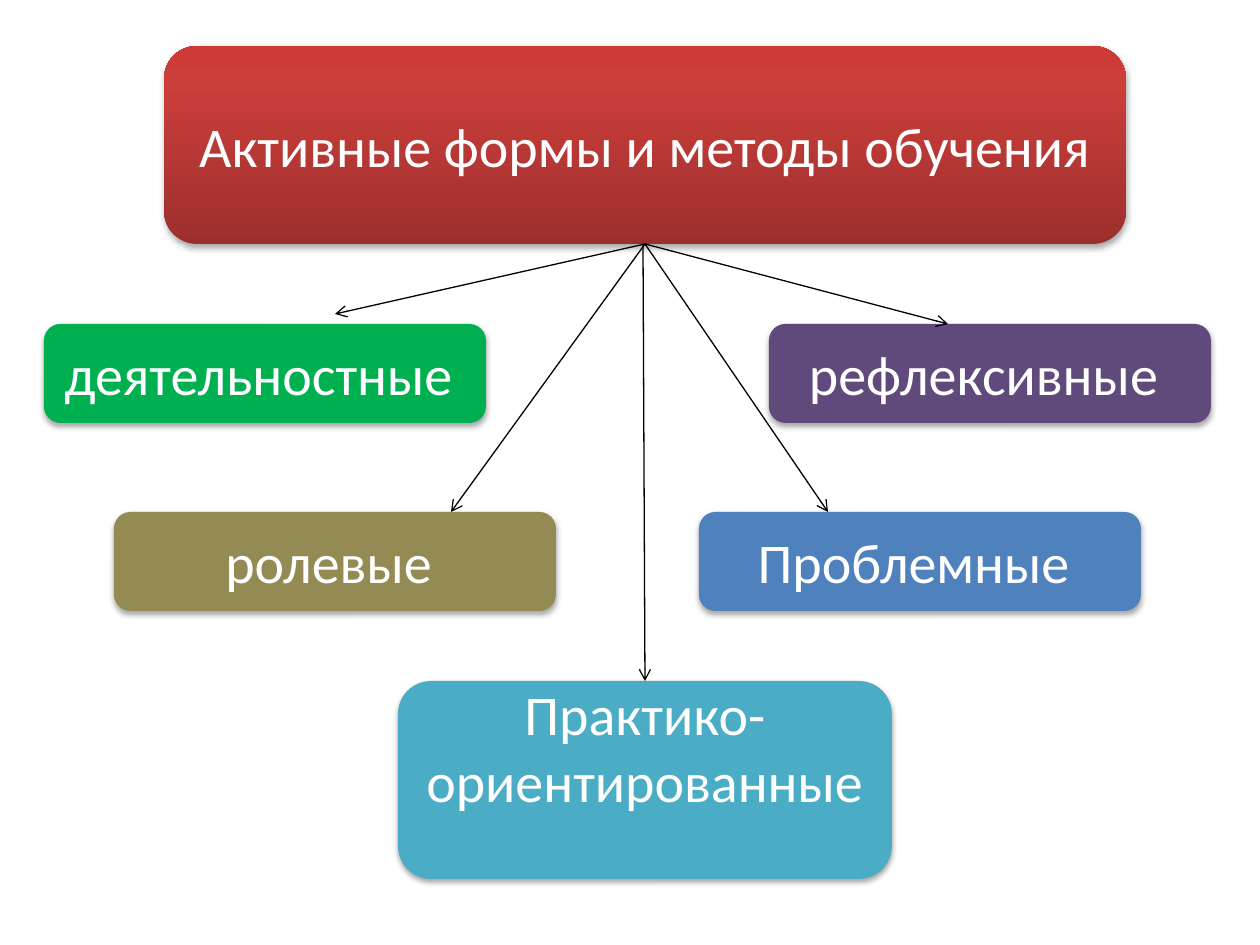
from copy import deepcopy
from pptx import Presentation
from pptx.dml.color import RGBColor
from pptx.enum.shapes import MSO_CONNECTOR as CONNECTOR, MSO_SHAPE as SHAPE
from pptx.enum.text import MSO_ANCHOR as ANCHOR, PP_ALIGN as ALIGN
from pptx.oxml import parse_xml
from pptx.oxml.ns import nsdecls, qn
from pptx.util import Emu, Pt

COLORS = {
    "white": "FFFFFF",
    "black": "000000",
    "red": "CE3B37",
    "green": "00B050",
    "olive": "948A54",
    "teal": "4BACC6",
    "blue": "4F81BD",
    "purple": "604A7B",
}
TITLE_STOPS = [(0, "9C2F2D"), (0.8, "CB3E3A"), (1, COLORS["red"])]
SHADOW = (
    f'<a:outerShdw {nsdecls("a")} blurRad="40000" dist="23000" dir="5400000" rotWithShape="0">'
    f'<a:srgbClr val="{COLORS["black"]}"><a:alpha val="35000"/></a:srgbClr></a:outerShdw>'
)


def px(value):
    return Emu(round(value * 914400 / 126))


presentation = Presentation()
presentation.slide_width, presentation.slide_height = px(1260), px(945)
slide = presentation.slides.add_slide(presentation.slide_layouts[6])

boxes = [
    ("Активные формы и методы обучения", "red", 164, 46, 962, 198, 6),
    ("деятельностные ", "green", 44, 324, 442, 99, 6),
    ("ролевые ", "olive", 114, 512, 442, 99, 6),
    ("Практико-ориентированные", "teal", 398, 681, 494, 198, 73),
    ("Проблемные ", "blue", 699, 512, 442, 99, 6),
    ("рефлексивные ", "purple", 769, 324, 442, 99, 6),
]
for text, color, left, top, width, height, bottom_margin in boxes:
    shape = slide.shapes.add_shape(
        SHAPE.ROUNDED_RECTANGLE, px(left), px(top), px(width), px(height)
    )
    shape.line.fill.background()
    shape.shadow.inherit = False
    shape._element.spPr.find(qn("a:effectLst")).append(parse_xml(SHADOW))
    if color == "red":
        shape.fill.gradient()
        shape.fill.gradient_angle = 90
        stop_list = shape._element.spPr.find(".//" + qn("a:gsLst"))
        stop_list.insert(1, deepcopy(stop_list[0]))
        for stop, (position, stop_color) in zip(shape.fill.gradient_stops, TITLE_STOPS):
            stop.position = position
            stop.color.rgb = RGBColor.from_string(stop_color)
    else:
        shape.fill.solid()
        shape.fill.fore_color.rgb = RGBColor.from_string(COLORS[color])
    frame = shape.text_frame
    frame.word_wrap = True
    frame.vertical_anchor = ANCHOR.MIDDLE
    frame.margin_bottom = px(bottom_margin)
    paragraph = frame.paragraphs[0]
    paragraph.text = text
    paragraph.alignment = ALIGN.CENTER
    paragraph.font.name = "Calibri"
    paragraph.font.size = Pt(32)
    paragraph.font.color.rgb = RGBColor.from_string(COLORS["white"])

arrows = [
    (645, 335, 314),
    (645, 451, 512),
    (645, 828, 512),
    (645, 948, 324),
    (643, 645, 681),
]
for start_x, end_x, end_y in arrows:
    arrow = slide.shapes.add_connector(
        CONNECTOR.STRAIGHT, px(start_x), px(244), px(end_x), px(end_y)
    )
    arrow.line.width = Pt(0.75)
    arrow.line.color.rgb = RGBColor.from_string(COLORS["black"])
    arrow.line._get_or_add_ln().append(
        parse_xml(f'<a:tailEnd {nsdecls("a")} type="arrow"/>')
    )
    arrow._element.spPr.append(parse_xml(f'<a:effectLst {nsdecls("a")}/>'))

presentation.save("out.pptx")
